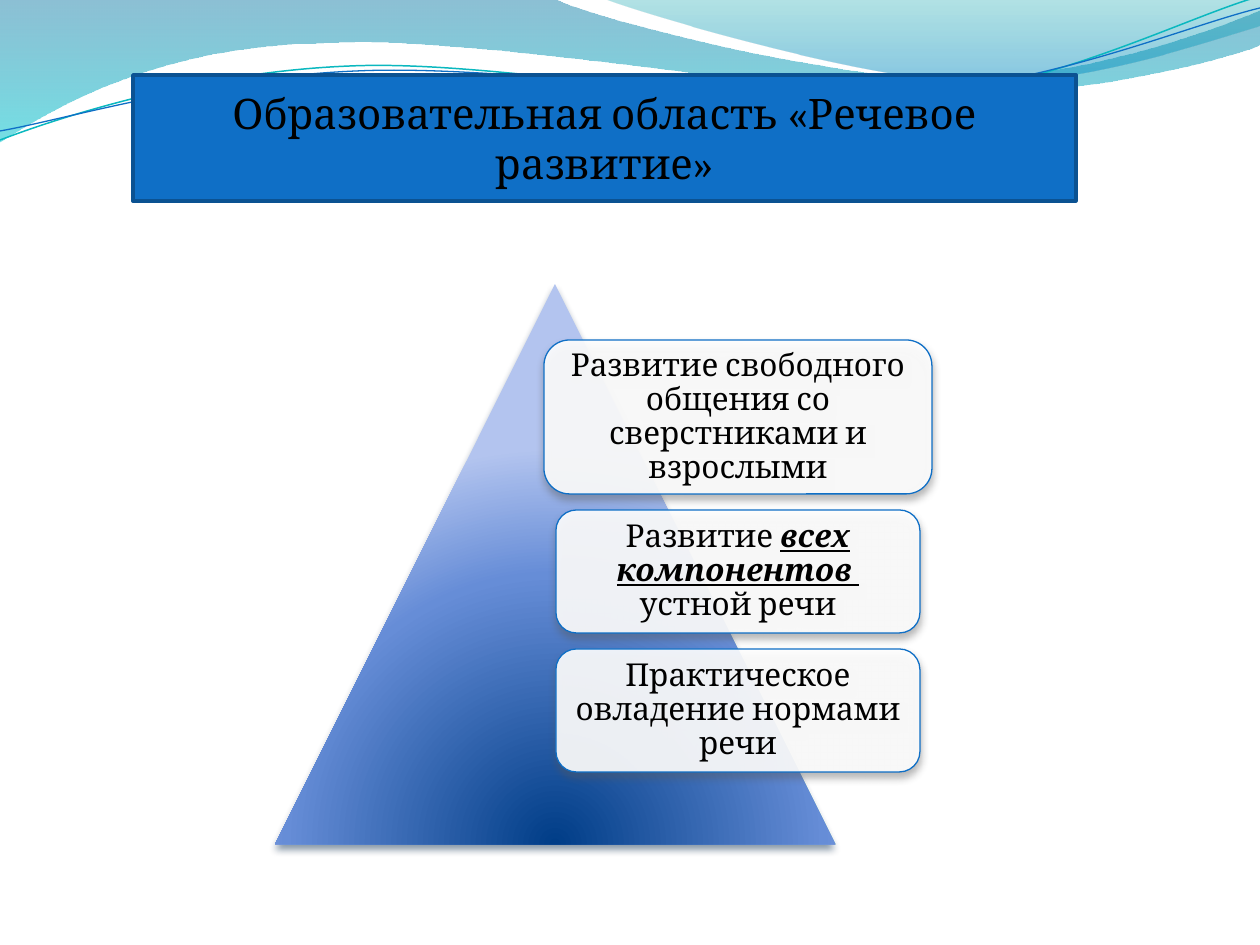
from lxml import etree
from pptx import Presentation
from pptx import util as u
from pptx.dml.color import RGBColor
from pptx.enum import shapes, text
from pptx.oxml import parse_xml
from pptx.oxml.ns import nsdecls, qn

PX = 914400 / 126
HUES = {"blue": "0F6FC6", "edge": "0B5292", "teal": "0AB8BF",
        "white": "FFFFFF", "black": "000000", "navy": "042747", "gray": "5A5A5A"}
DOWN = '<a:lin ang="5400000" scaled="1"/>'
GLOW = ('<a:path path="circle"><a:fillToRect l="50000" t="130000" '
        'r="50000" b="-30000"/></a:path>')


def blend(shape, stops, way):
    marks = "".join(
        f'<a:gs pos="{pos * 1000}"><a:srgbClr val="{hue}">'
        f'<a:alpha val="{alpha * 1000}"/></a:srgbClr></a:gs>'
        for pos, hue, alpha in stops)
    shape.fill.solid()
    props = shape._element.spPr
    props.replace(props.find(qn("a:solidFill")), parse_xml(
        f'<a:gradFill {nsdecls("a")} rotWithShape="1">'
        f'<a:gsLst>{marks}</a:gsLst>{way}</a:gradFill>'))


def shade(shape, hue):
    props = shape._element.spPr
    props.find(qn("a:effectLst")).append(parse_xml(
        f'<a:outerShdw {nsdecls("a")} blurRad="57150" dist="38100" '
        f'dir="5400000" algn="ctr" rotWithShape="0"><a:srgbClr val="{hue}">'
        f'<a:alpha val="48000"/></a:srgbClr></a:outerShdw>'))


deck = Presentation()
deck.slide_width, deck.slide_height = u.Inches(10), u.Inches(7.5)
slide = deck.slides.add_slide(deck.slide_layouts[6])

waves = [
    ([(0, 0), (554, -1), (600, 21, 837, 79, 955, 79),
      (1075, 79, 1207, 33, 1260, 11), (1261, 45),
      (1239, 55, 1096, 96, 940, 95), (784, 94, 481, 35, 324, 43),
      (163, 45, 58, 105, -1, 142), (0, 0)],
     [(0, "0074A1", 45), (100, "00C6CF", 55)], None, 0),
    ([(604, -1), (641, 14, 859, 78, 969, 82),
      (1079, 87, 1211, 40, 1260, 26), (1260, 0), (604, -1)],
     [(0, "00A1A9", 30), (80, "008BBF", 45)], None, 0),
    ([(0, 140), (60, 117, 199, 72, 349, 66),
      (498, 59, 747, 112, 898, 101), (1049, 89, 1182, 19, 1257, -3)],
     None, "teal", 0.85),
    ([(0, 131), (59, 121, 207, 77, 357, 71),
      (508, 64, 752, 106, 903, 94), (1053, 84, 1186, 26, 1260, 8)],
     None, "blue", 0.75),
]
for legs, stops, hue, width in waves:
    dots = [(round(leg[i] * PX), round(leg[i + 1] * PX))
            for leg in legs for i in range(0, len(leg), 2)]
    pen = slide.shapes.build_freeform(*dots[0])
    pen.add_line_segments(dots[1:], close=stops is not None)
    wave = pen.convert_to_shape()
    lines = iter(list(wave._element.spPr.iter(qn("a:lnTo"))))
    for leg in legs[1:]:
        first = next(lines)
        if len(leg) == 6:
            first.tag = qn("a:cubicBezTo")
            for line in (next(lines), next(lines)):
                first.append(line[0])
                line.getparent().remove(line)
    wave.shadow.inherit = False
    if stops:
        blend(wave, stops, DOWN)
        wave.line.fill.background()
    else:
        wave.fill.background()
        wave.line.color.rgb = RGBColor.from_string(HUES[hue])
        wave.line.width = u.Pt(width)

RECT, ROUND = shapes.MSO_SHAPE.RECTANGLE, shapes.MSO_SHAPE.ROUNDED_RECTANGLE

boxes = [
    (RECT, (133, 75, 943, 126), [("Образовательная область «Речевое развитие»", False)]),
    (ROUND, (544, 340, 388, 154),
     [("Развитие свободного общения со сверстниками и взрослыми", False)]),
    (ROUND, (556, 510, 364, 123),
     [("Развитие ", False), ("всех компонентов  ", True), ("устной речи", False)]),
    (ROUND, (556, 649, 364, 123), [("Практическое овладение нормами речи", False)]),
]
for kind, place, runs in boxes:
    title = kind == RECT
    box = slide.shapes.add_shape(kind, *[round(n * PX) for n in place])
    box.shadow.inherit = False
    box.fill.solid()
    box.fill.fore_color.rgb = RGBColor.from_string(HUES["blue" if title else "white"])
    box.line.color.rgb = RGBColor.from_string(HUES["edge" if title else "blue"])
    box.line.width = u.Pt(2 if title else 0.75)
    frame = box.text_frame
    frame.word_wrap = True
    frame.vertical_anchor = text.MSO_ANCHOR.MIDDLE
    para = frame.paragraphs[0]
    para.alignment = text.PP_ALIGN.CENTER
    if not title:
        shade(box, HUES["gray"])
        tint = box._element.spPr.find(qn("a:solidFill"))[0]
        etree.SubElement(tint, qn("a:alpha")).set("val", "90000")
        frame.margin_left = frame.margin_right = round(9 * PX)
        frame.margin_top = frame.margin_bottom = round(9 * PX)
        para.line_spacing = 0.9
    for words, strong in runs:
        run = para.add_run()
        run.text = words
        font = run.font
        font.name, font.size = "Cambria", u.Pt(24 if title else 18)
        font.color.rgb = RGBColor.from_string(HUES["black"])
        if strong:
            font.bold = font.italic = font.underline = True
    if title:
        cone = slide.shapes.add_shape(shapes.MSO_SHAPE.ISOSCELES_TRIANGLE,
                                      *[round(n * PX) for n in (275, 284, 560, 560)])
        cone.shadow.inherit = False
        blend(cone, [(0, "003D87", 100), (68, "668DD7", 100),
                     (100, "B3C4EF", 100)], GLOW)
        cone.line.fill.background()
        shade(cone, HUES["navy"])

deck.save("out.pptx")
